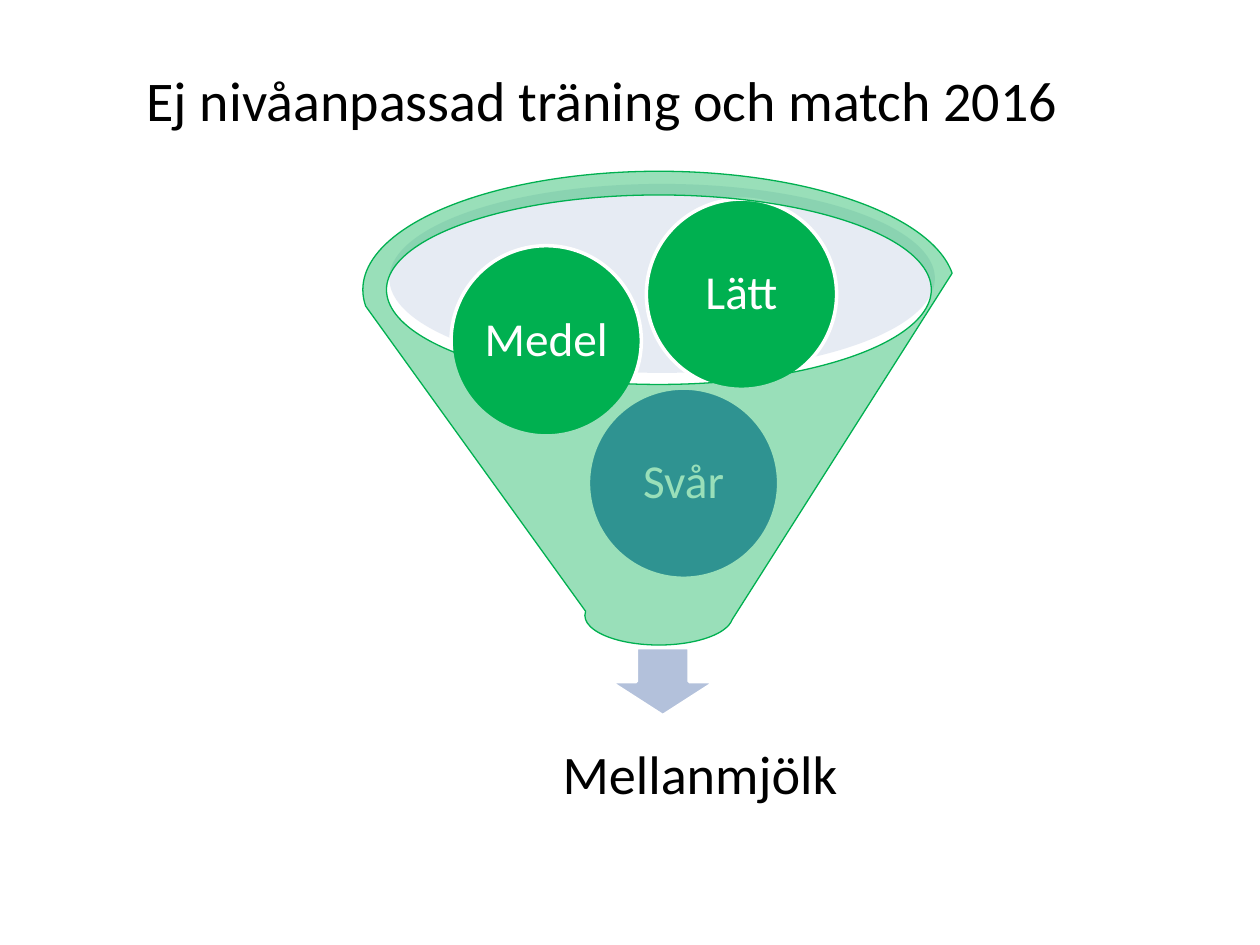
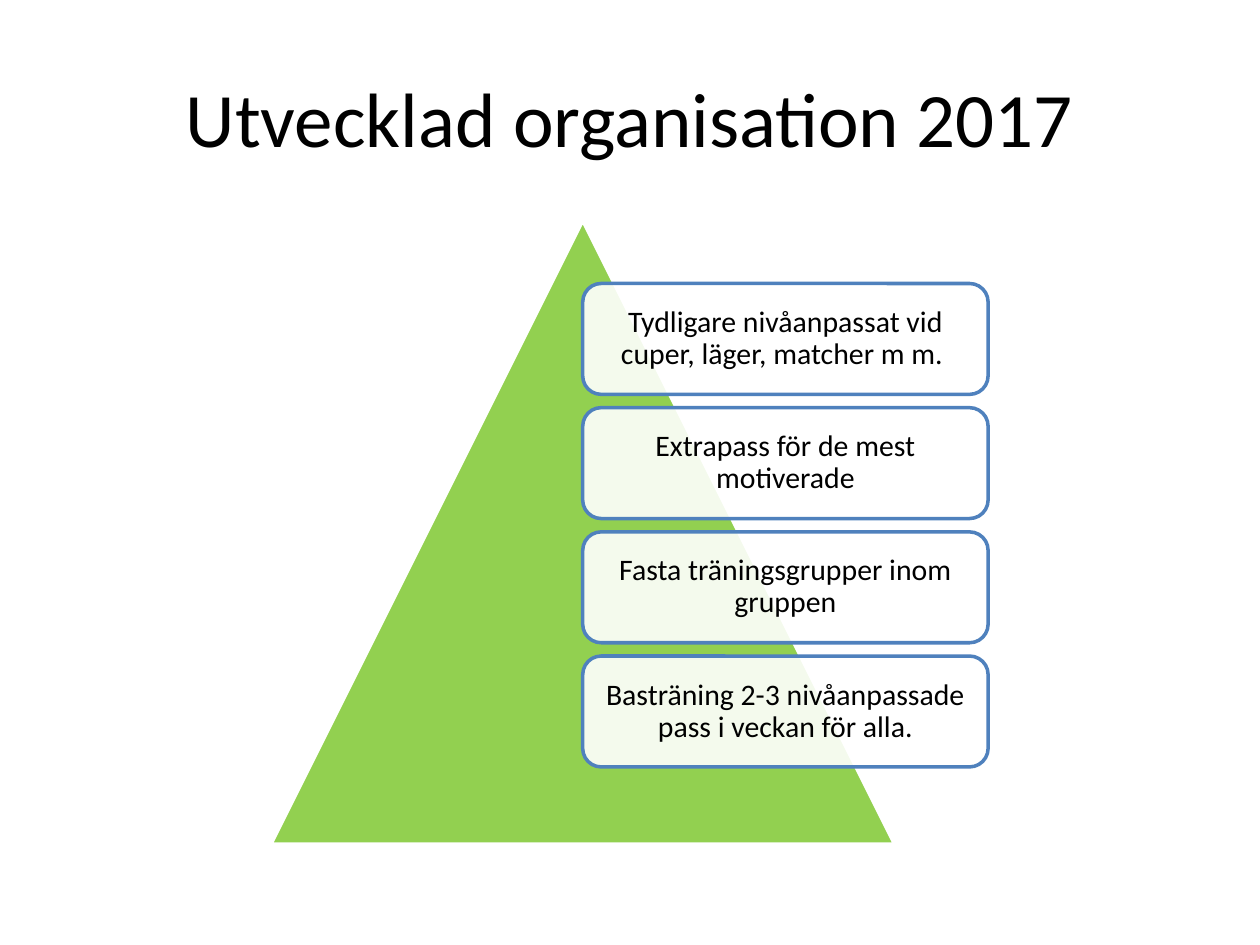
from lxml.etree import SubElement
from pptx import Presentation
from pptx.dml.color import RGBColor
from pptx.enum.shapes import MSO_SHAPE
from pptx.enum.text import MSO_ANCHOR, PP_ALIGN
from pptx.oxml.ns import qn
from pptx.util import Inches, Pt

# Shared style
FONT = "Calibri"
BLACK = RGBColor(0x00, 0x00, 0x00)
WHITE = RGBColor(0xFF, 0xFF, 0xFF)
GREEN = RGBColor(0x00, 0xB0, 0x50)
LIME = RGBColor(0x92, 0xD0, 0x50)
BLUE = RGBColor(0x4F, 0x81, 0xBD)
PALE_BLUE = RGBColor(0xC2, 0xCD, 0xE1)
ARROW_BLUE = RGBColor(0xB3, 0xC1, 0xDB)

# Content
FUNNEL_TITLE = "Ej nivåanpassad träning och match 2016"
BALLS = [  # text, left, top, fill
    ("Svår", 4.67, 3.08, BLUE),
    ("Medel", 3.58, 1.95, GREEN),
    ("Lätt", 5.13, 1.58, GREEN),
]
FUNNEL_RESULT = "Mellanmjölk"
PYRAMID_TITLE = "Utvecklad organisation 2017"
LEVELS = [
    "Tydligare nivåanpassat vid cuper, läger, matcher m m. ",
    "Extrapass för de mest motiverade",
    "Fasta träningsgrupper inom gruppen",
    "Basträning 2-3 nivåanpassade pass i veckan för alla.",
]

# Geometry, in inches
BALL = 1.51
PYRAMID_LEFT, PYRAMID_TOP, PYRAMID = 2.15, 1.75, 4.95
LEVEL_W, LEVEL_H = 0.65 * PYRAMID, 0.88
LEVEL_LEFT, LEVEL_TOP = PYRAMID_LEFT + PYRAMID / 2, PYRAMID_TOP + 0.5
LEVEL_STEP = LEVEL_H * 1.12


def write(shape, text, size, color, inset):
    tf = shape.text_frame
    tf.word_wrap = True
    tf.vertical_anchor = MSO_ANCHOR.MIDDLE
    tf.margin_left = tf.margin_right = Inches(inset)
    tf.margin_top = tf.margin_bottom = Inches(inset)
    p = tf.paragraphs[0]
    p.text = text
    p.alignment = PP_ALIGN.CENTER
    p.line_spacing = 0.9
    p.font.name, p.font.size, p.font.color.rgb = FONT, Pt(size), color


def add_part(s, kind, box, fill, line=None, width=2, opacity=100):
    sp = s.shapes.add_shape(kind, *map(Inches, box))
    sp.shadow.inherit = False
    sp.fill.solid()
    sp.fill.fore_color.rgb = fill
    if opacity < 100:
        color = sp.fill._xPr.find(qn("a:solidFill"))[0]
        SubElement(color, qn("a:alpha"), val=str(opacity * 1000))
    if line is None:
        sp.line.fill.background()
    else:
        sp.line.color.rgb, sp.line.width = line, Pt(width)
    return sp


def add_slide(prs, title, box, size):
    s = prs.slides.add_slide(prs.slide_layouts[5])
    sp = s.shapes.title
    sp.left, sp.top, sp.width, sp.height = map(Inches, box)
    sp.text = title
    p = sp.text_frame.paragraphs[0]
    p.alignment = PP_ALIGN.CENTER
    p.font.name, p.font.size, p.font.color.rgb = FONT, Pt(size), BLACK
    return s


def build_funnel(prs):
    s = add_slide(prs, FUNNEL_TITLE, (0.28, 0.44, 9, 0.7), 32)
    # Opening and outflow
    add_part(s, MSO_SHAPE.OVAL, (3.09, 1.46, 4.33, 1.5), PALE_BLUE, opacity=40)
    add_part(s, MSO_SHAPE.DOWN_ARROW, (4.84, 5.14, 0.84, 0.54), ARROW_BLUE, WHITE)
    result = s.shapes.add_textbox(*map(Inches, (2.32, 5.77, 6.47, 0.8)))
    write(result, FUNNEL_RESULT, 31, BLACK, 0.1)
    # Balls, then the funnel in front of them
    for text, left, top, fill in BALLS:
        ball = add_part(s, MSO_SHAPE.OVAL, (left, top, BALL, BALL), fill, WHITE)
        write(ball, text, 27, WHITE, 0.04)
    add_part(s, MSO_SHAPE.FUNNEL, (2.88, 1.36, 4.7, 3.76), GREEN, GREEN, 0.75, 40)


def build_pyramid(prs):
    s = add_slide(prs, PYRAMID_TITLE, (0.5, 0.3, 9, 1.25), 44)
    add_part(s, MSO_SHAPE.ISOSCELES_TRIANGLE,
             (PYRAMID_LEFT, PYRAMID_TOP, PYRAMID, PYRAMID), LIME, WHITE)
    # Levels stacked from the pyramid's centre line
    for i, text in enumerate(LEVELS):
        box = (LEVEL_LEFT, LEVEL_TOP + i * LEVEL_STEP, LEVEL_W, LEVEL_H)
        level = add_part(s, MSO_SHAPE.ROUNDED_RECTANGLE, box, WHITE, BLUE, opacity=90)
        write(level, text, 17, BLACK, 0.07)


def main():
    prs = Presentation()
    prs.slide_width, prs.slide_height = Inches(10), Inches(7.5)
    build_funnel(prs)
    build_pyramid(prs)
    prs.save("out.pptx")


if __name__ == "__main__":
    main()
